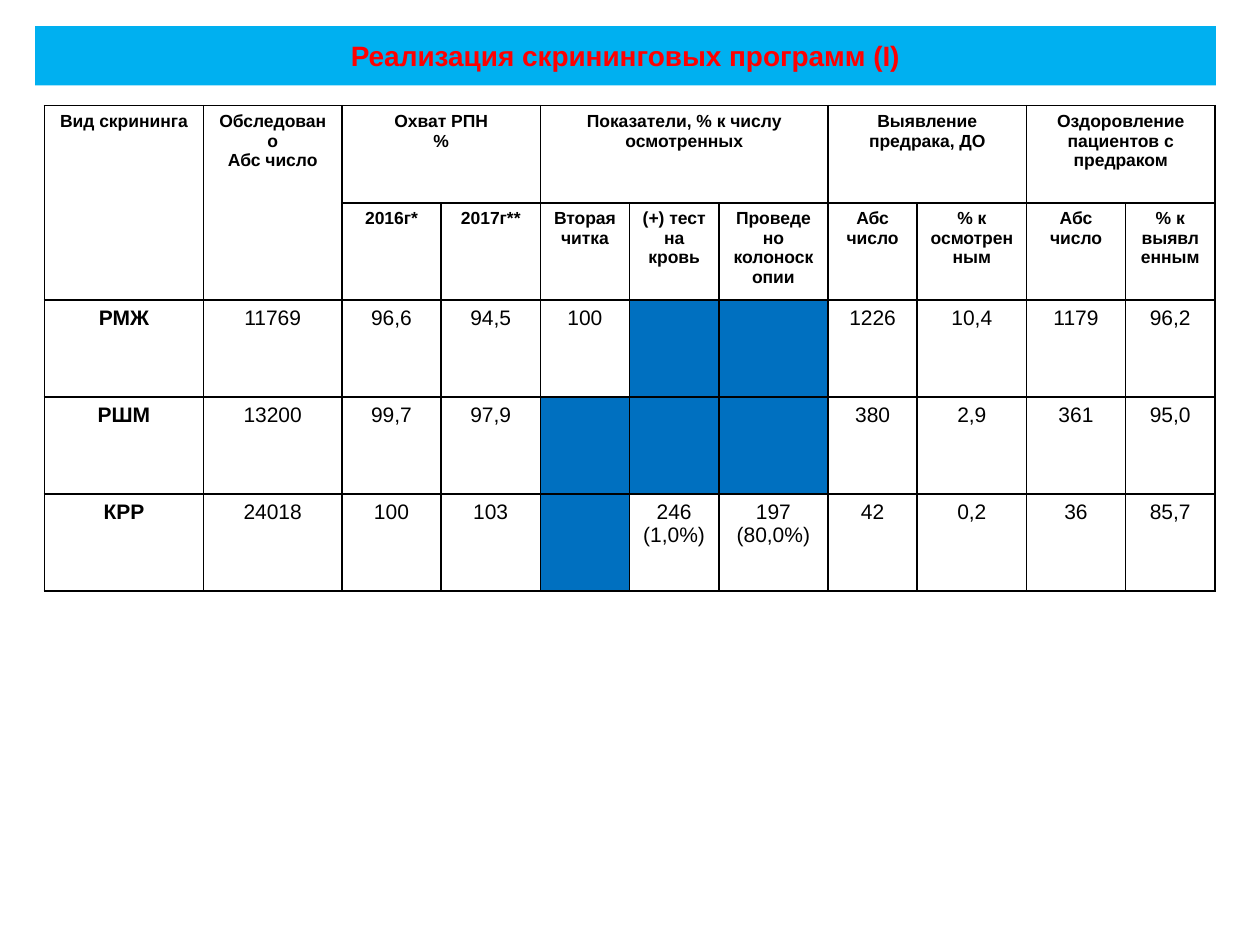
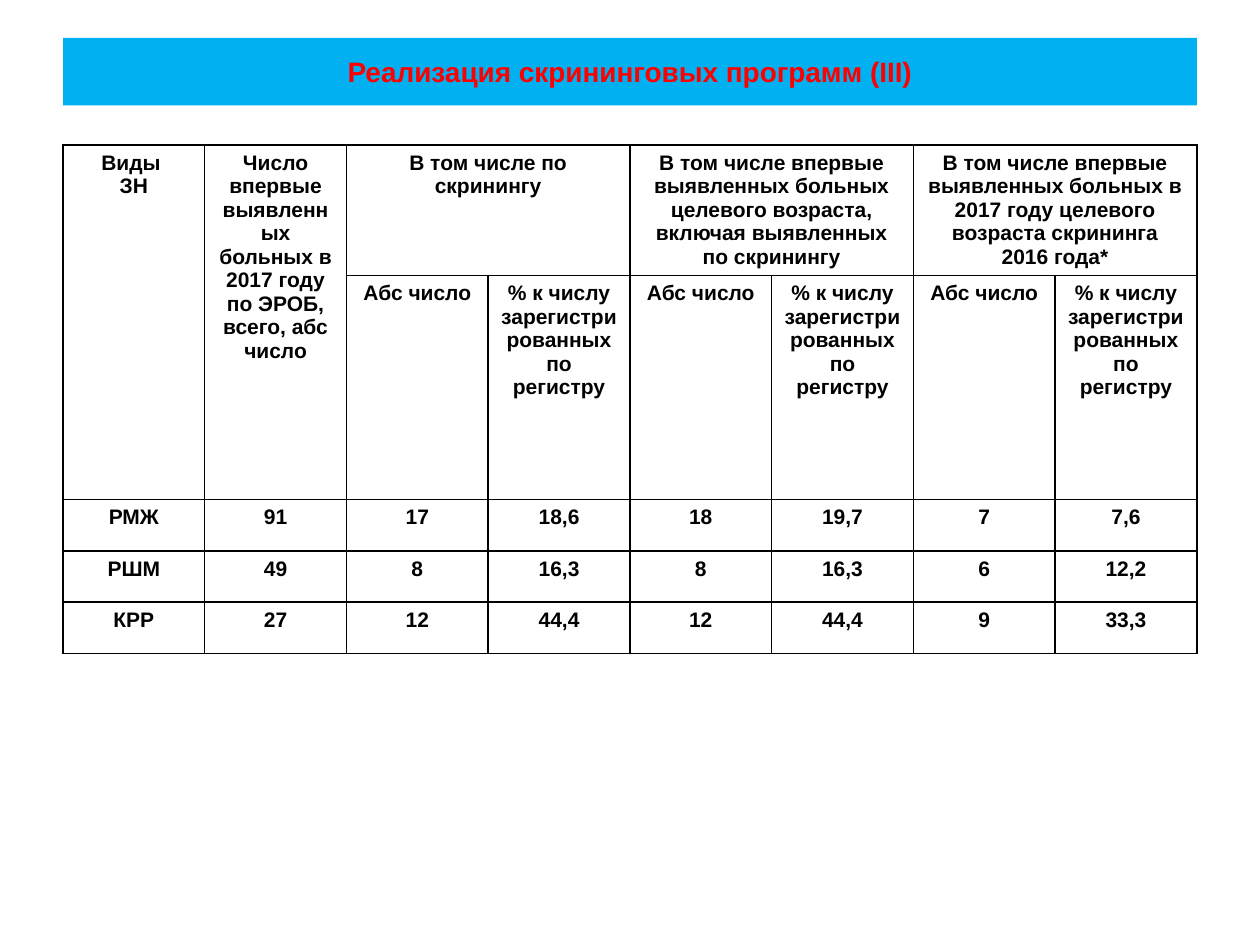
import pptx
import pptx.dml.color
import pptx.enum.text
import pptx.oxml
import pptx.oxml.ns
import pptx.util

Pt = pptx.util.Pt

# Shared look
FONT = "Arial"
BAND, TITLE, INK, PAPER, BLOCKED = "00B0F0", "FF0000", "000000", "FFFFFF", "0070C0"
CENTER = pptx.enum.text.PP_ALIGN.CENTER
BORDER = (
    '<a:{side} {ns} w="12700"><a:solidFill><a:srgbClr val="{color}"/></a:solidFill></a:{side}>'
)


def rgb(color):
    return pptx.dml.color.RGBColor.from_string(color)


def write(frame, text, size, bold, color):
    """Write centred text, one paragraph for each line."""
    for number, line in enumerate(text.split("\n")):
        para = frame.add_paragraph() if number else frame.paragraphs[0]
        para.alignment = CENTER
        span = para.add_run()
        span.text = line
        span.font.name = FONT
        span.font.size = Pt(size)
        span.font.bold = bold
        span.font.color.rgb = rgb(color)


# Table contents: None continues a merged cell, "" is a cell that does not apply
coverage_rows = [
    ["Вид скрининга", "Обследовано\nАбс число", "Охват РПН\n%", None,
     "Показатели, % к числу осмотренных", None, None,
     "Выявление предрака, ДО", None, "Оздоровление пациентов с предраком", None],
    [None, None, "2016г*", "2017г**", "Вторая читка", "(+) тест\nна кровь",
     "Проведено колоноскопии", "Абс число", "% к осмотренным",
     "Абс число", "% к выявленным"],
    ["РМЖ", "11769", "96,6", "94,5", "100", "", "", "1226", "10,4", "1179", "96,2"],
    ["РШМ", "13200", "99,7", "97,9", "", "", "", "380", "2,9", "361", "95,0"],
    ["КРР", "24018", "100", "103", "", "246 (1,0%)", "197 (80,0%)", "42", "0,2", "36", "85,7"],
]
detection_rows = [
    ["Виды \nЗН",
     "Число впервые выявленных больных в 2017 году по ЭРОБ, всего, абс число",
     "В том числе по скринингу", None,
     "В том числе впервые выявленных больных целевого возраста, "
     "включая выявленных по скринингу", None,
     "В том числе впервые выявленных больных в 2017 году целевого возраста "
     "скрининга 2016 года*", None],
    [None, None] + ["Абс число", "% к числу зарегистрированных по регистру"] * 3,
    ["РМЖ", "91", "17", "18,6", "18", "19,7", "7", "7,6"],
    ["РШМ", "49", "8", "16,3", "8", "16,3", "6", "12,2"],
    ["КРР", "27", "12", "44,4", "12", "44,4", "9", "33,3"],
]

# Positions in points; boxes are left, top, width, height
pages = [
    dict(title="Реализация скрининговых программ (I)", band=(20, 15, 674.8, 33.8),
         corner=(25.4, 60.4), rows=coverage_rows,
         widths=[90.9, 79.1, 56.7, 56.7, 51, 51, 62.4, 51, 62.4, 56.7, 51],
         heights=[55.5] * 5, header_size=10, bold_values=False, fill=PAPER),
    dict(title="Реализация скрининговых программ (III)", band=(36, 21.6, 648, 38.6),
         corner=(36, 82.8), rows=detection_rows, widths=[81] * 8,
         heights=[74.5, 127.8] + [29.3] * 3, header_size=12, bold_values=True, fill=None),
]

deck = pptx.Presentation()
deck.slide_width, deck.slide_height = Pt(720), Pt(540)

for content in pages:
    page = deck.slides.add_slide(deck.slide_layouts[5])

    # Title band
    title = page.shapes.title
    title.left, title.top, title.width, title.height = map(Pt, content["band"])
    title.fill.solid()
    title.fill.fore_color.rgb = rgb(BAND)
    title.text_frame.auto_size = pptx.enum.text.MSO_AUTO_SIZE.NONE
    title.text_frame.vertical_anchor = pptx.enum.text.MSO_ANCHOR.MIDDLE
    write(title.text_frame, content["title"], 16, True, TITLE)

    # Table grid
    rows, widths, heights = content["rows"], content["widths"], content["heights"]
    left, top = content["corner"]
    table = page.shapes.add_table(
        len(rows), len(widths), Pt(left), Pt(top), Pt(sum(widths)), Pt(sum(heights))
    ).table
    table.first_row = table.horz_banding = False
    for column, width in zip(table.columns, widths):
        column.width = Pt(width)
    for row, height in zip(table.rows, heights):
        row.height = Pt(height)

    # Cells
    for r, texts in enumerate(rows):
        for c, text in enumerate(texts):
            cell = table.cell(r, c)
            color = BLOCKED if text == "" else content["fill"]
            if color:
                cell.fill.solid()
                cell.fill.fore_color.rgb = rgb(color)
            else:
                cell.fill.background()
            properties = cell._tc.get_or_add_tcPr()
            for place, side in enumerate(["lnL", "lnR", "lnT", "lnB"]):
                line = BORDER.format(side=side, ns=pptx.oxml.ns.nsdecls("a"), color=INK)
                properties.insert(place, pptx.oxml.parse_xml(line))
            if text:
                header = r < 2
                size = content["header_size"] if header else 12
                bold = header or c == 0 or content["bold_values"]
                write(cell.text_frame, text, size, bold, INK)

    # Header merges: down over both header rows, or across the following columns
    for c, text in enumerate(rows[0]):
        if text is None:
            continue
        last = c
        while last + 1 < len(widths) and rows[0][last + 1] is None:
            last += 1
        bottom = 1 if rows[1][c] is None else 0
        table.cell(0, c).merge(table.cell(bottom, last))

deck.save("out.pptx")
